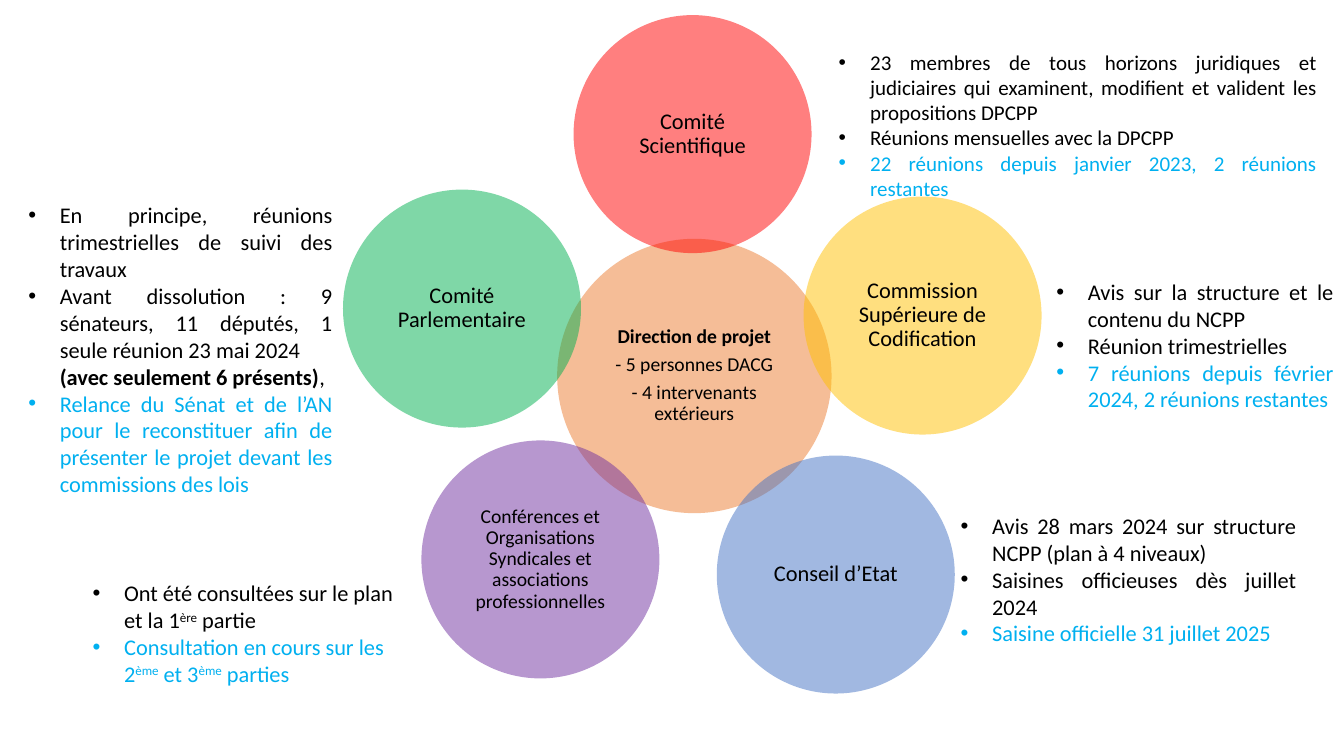
import pptx
import pptx.util
import pptx.dml.color
import pptx.enum.shapes
import pptx.enum.text
import pptx.oxml.ns
from lxml import etree

Pt = pptx.util.Pt
ALIGN = pptx.enum.text.PP_ALIGN
ANCHOR = pptx.enum.text.MSO_ANCHOR
FONT = "Calibri"
BLACK, BLUE = "000000", "00B0F0"
INDENT = 22.5
DISC = 170  # diameter of the outer circles

# left, top, diameter, colour, text size, lines
CIRCLES = [
    (398, 170.6, 196, "ED7D31", 14,
     ["|Direction de projet|", "- 5 personnes DACG", "- 4 intervenants extérieurs"]),
    (409.7, 10.8, DISC, "FF0000", 16, ["Comité Scientifique"]),
    (574, 140.4, DISC, "FFC000", 16, ["Commission Supérieure de Codification"]),
    (512, 325.4, DISC, "4472C4", 16, ["Conseil d’Etat"]),
    (301, 314.6, DISC, "7030A0", 14,
     ["Conférences et Organisations Syndicales et associations professionnelles"]),
    (245, 135.4, DISC, "00B050", 16, ["Comité Parlementaire"]),
]

# (left, top, width, height), text size, alignment, items; the last item is blue
SCIENCE = ((592, 31.7, 355.7, 116.6), 15, ALIGN.JUSTIFY, [
    "23 membres de tous horizons juridiques et judiciaires qui examinent, "
    "modifient et valident les propositions DPCPP",
    "Réunions mensuelles avec la DPCPP",
    "22 réunions depuis janvier 2023, 2 réunions restantes"])
LISTS = [
    ((747.4, 195, 212.4, 104.4), 16, ALIGN.JUSTIFY, [
        "Avis sur la structure et le contenu du NCPP",
        "Réunion trimestrielles",
        "7 réunions depuis février 2024, 2 réunions restantes"]),
    ((679, 362.2, 254.2, 104.4), 16, ALIGN.JUSTIFY, [
        "Avis 28 mars 2024 sur structure NCPP (plan à 4 niveaux)",
        "Saisines officieuses dès juillet 2024",
        "Saisine officielle 31 juillet 2025"]),
    ((59, 410.4, 239.8, 85), 16, ALIGN.LEFT, [
        "Ont été consultées sur le plan et la 1^ère^ partie",
        "Consultation en cours sur les 2^ème^ et 3^ème^ parties"]),
    ((13, 140.4, 231.8, 220.3), 16, ALIGN.JUSTIFY, [
        "En principe, réunions trimestrielles de suivi des travaux",
        "Avant dissolution : 9 sénateurs, 11 députés, 1 seule réunion 23 mai 2024",
        "|(avec seulement 6 présents)|, ",
        "Relance du Sénat et de l’AN pour le reconstituer afin de présenter "
        "le projet devant les commissions des lois"]),
]


def paint(target, color):
    """Give a font or a solid fill its colour."""
    target.rgb = pptx.dml.color.RGBColor.from_string(color)


def child(parent, tag, **attrs):
    return etree.SubElement(parent, pptx.oxml.ns.qn(tag), **attrs)


def write(par, text, size=16, color=BLACK):
    """Write text; |...| is bold and ^...^ is superscript."""
    mark = "^" if "^" in text else "|"
    for i, piece in enumerate(text.split(mark)):
        if not piece:
            continue
        run = par.add_run()
        run.text = piece
        font = run.font
        font.name, font.size = FONT, Pt(size)
        font.bold = mark == "|" and i % 2 == 1
        paint(font.color, color)
        if mark == "^" and i % 2:
            run._r.get_or_add_rPr().set("baseline", "30000")


def lines(frame, texts):
    """Yield a paragraph for each text."""
    for i, text in enumerate(texts):
        yield frame.add_paragraph() if i else frame.paragraphs[0], text


def circle(slide, left, top, width, color, size, texts):
    oval = slide.shapes.add_shape(
        pptx.enum.shapes.MSO_SHAPE.OVAL, Pt(left), Pt(top), Pt(width), Pt(width))
    oval.shadow.inherit = False
    oval.line.fill.background()
    oval.fill.solid()
    paint(oval.fill.fore_color, color)
    # Half transparent fill
    tone = oval._element.spPr.find(".//" + pptx.oxml.ns.qn("a:srgbClr"))
    child(tone, "a:alpha", val="50000")

    frame = oval.text_frame
    frame.word_wrap = True
    frame.vertical_anchor = ANCHOR.MIDDLE
    frame.margin_left = frame.margin_right = Pt(1.5)
    frame.margin_top = frame.margin_bottom = Pt(1.5)
    for par, text in lines(frame, texts):
        par.alignment = ALIGN.CENTER
        par.line_spacing = 0.9
        par.space_after = Pt(0.35 * size)
        write(par, text, size=size)


def bullet(par, shown):
    """Set a hanging bullet, or the same indent without one."""
    props = par._p.get_or_add_pPr()
    props.set("marL", str(Pt(INDENT)))
    props.set("indent", str(Pt(-INDENT if shown else 0)))
    if shown:
        child(props, "a:buFont", typeface="Arial")
        child(props, "a:buChar", char="•")
    else:
        child(props, "a:buNone")


def notes(box, place, size, align, items):
    """Place and fill a bulleted list."""
    box.left, box.top, box.width, box.height = map(Pt, place)
    frame = box.text_frame
    frame.word_wrap = True
    frame.auto_size = pptx.enum.text.MSO_AUTO_SIZE.NONE
    frame.vertical_anchor = ANCHOR.TOP
    for par, text in lines(frame, items):
        par.alignment = align
        par.space_before = Pt(0)
        bullet(par, not text.startswith("|"))
        write(par, text, size=size, color=BLUE if text == items[-1] else BLACK)


def main():
    deck = pptx.Presentation()
    deck.slide_width, deck.slide_height = Pt(960), Pt(540)
    # The comparison layout offers four list placeholders
    slide = deck.slides.add_slide(deck.slide_layouts.get_by_name("Comparison"))
    title = slide.shapes.title._element
    title.getparent().remove(title)

    # Circles around the project team
    for spec_row in CIRCLES:
        circle(slide, *spec_row)

    # Lists beside the circles
    for box, entry in zip(slide.placeholders, LISTS):
        notes(box, *entry)
    # The fifth list lies over the yellow circle
    notes(slide.shapes.add_textbox(0, 0, 0, 0), *SCIENCE)

    deck.save("out.pptx")


if __name__ == "__main__":
    main()
